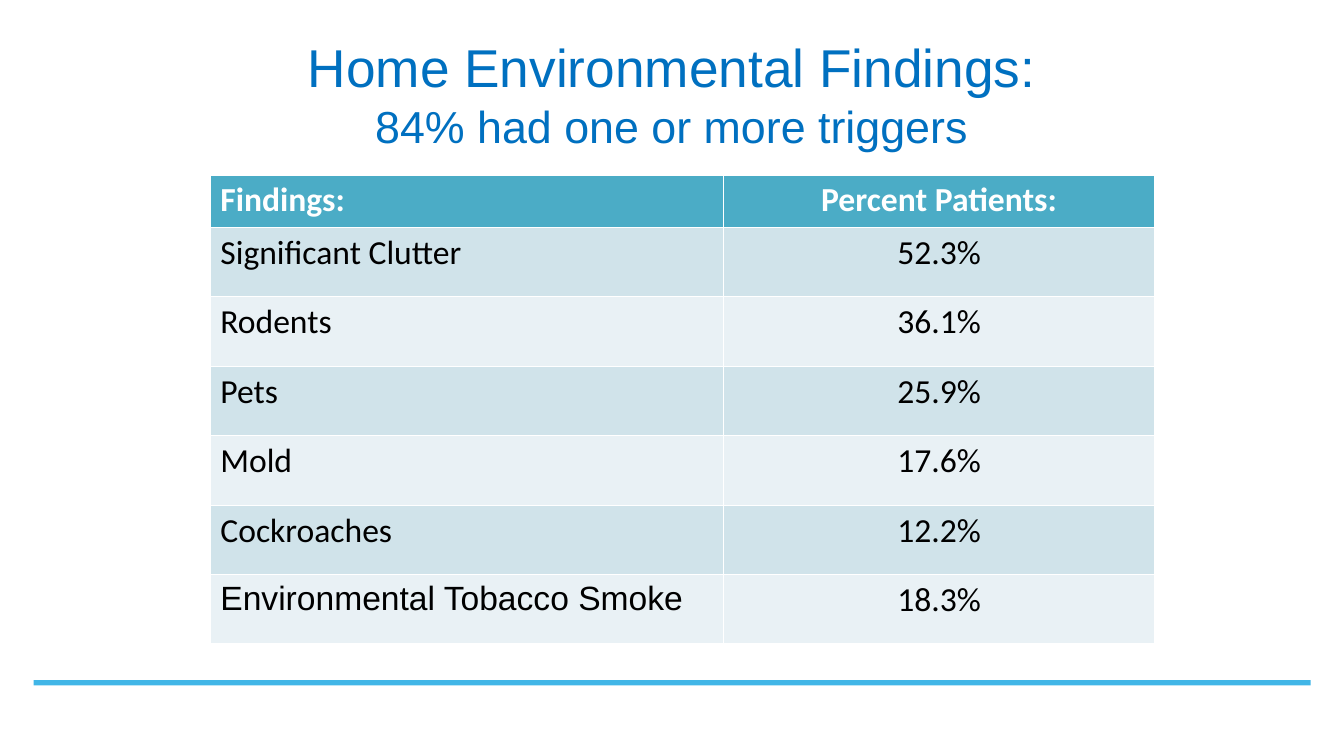
from dataclasses import dataclass

from pptx import Presentation
from pptx.dml.color import RGBColor
from pptx.enum.shapes import MSO_SHAPE as Preset
from pptx.enum.text import MSO_ANCHOR as Anchor, PP_ALIGN as Align
from pptx.slide import Slide
from pptx.table import _Cell as Cell
from pptx.text.text import _Paragraph as Paragraph
from pptx.util import Cm, Pt


@dataclass(frozen=True)
class Theme:
    title: str = "0070C0"
    rule: str = "41B6E7"
    header: str = "4BACC6"
    bands: tuple[str, str] = ("D0E3EA", "E9F1F5")
    light: str = "FFFFFF"
    dark: str = "000000"
    heading_font: str = "Arial"
    body_font: str = "Calibri"
    title_size: int = 38
    subtitle_size: int = 32
    table_size: int = 24


@dataclass(frozen=True)
class Finding:
    name: str
    percent: str
    name_font: str = "Calibri"


THEME = Theme()
HEADER = Finding("Findings:", "Percent Patients:")
FINDINGS = [
    Finding("Significant Clutter", "52.3%"),
    Finding("Rodents", "36.1%"),
    Finding("Pets", "25.9%"),
    Finding("Mold", "17.6%"),
    Finding("Cockroaches", "12.2%"),
    Finding("Environmental Tobacco Smoke", "18.3%", THEME.heading_font),
]
COLUMN_WIDTHS = (Cm(12.93), Cm(10.87))
HEADER_HEIGHT = Cm(1.32)
ROW_HEIGHT = Cm(1.75)


def add_text(paragraph: Paragraph, text: str, *, font: str, size: int,
             color: str, bold: bool = False) -> None:
    run = paragraph.add_run()
    run.text = text
    run.font.name = font
    run.font.size = Pt(size)
    run.font.bold = bold
    run.font.color.rgb = RGBColor.from_string(color)


def draw_rule(slide: Slide) -> None:
    rule = slide.shapes.add_shape(Preset.RECTANGLE, Cm(0.85), Cm(17.14), Cm(32.18), Cm(0.13))
    rule.shadow.inherit = False
    rule.fill.solid()
    rule.fill.fore_color.rgb = RGBColor.from_string(THEME.rule)
    rule.line.fill.background()


def draw_title(slide: Slide) -> None:
    title = slide.shapes.title
    title.left, title.top, title.width, title.height = Cm(1.69), Cm(0.76), Cm(30.48), Cm(3.18)
    title.text_frame.vertical_anchor = Anchor.MIDDLE
    title.text_frame.word_wrap = True
    paragraph = title.text_frame.paragraphs[0]
    paragraph.alignment = Align.CENTER
    add_text(paragraph, "Home Environmental Findings:", font=THEME.heading_font,
             size=THEME.title_size, color=THEME.title)
    paragraph.add_line_break()
    add_text(paragraph, "84% had one or more triggers", font=THEME.heading_font,
             size=THEME.subtitle_size, color=THEME.title)


def fill_cell(cell: Cell, text: str, *, fill: str, align: Align, font: str,
              color: str, bold: bool) -> None:
    cell.fill.solid()
    cell.fill.fore_color.rgb = RGBColor.from_string(fill)
    paragraph = cell.text_frame.paragraphs[0]
    paragraph.alignment = align
    add_text(paragraph, text, font=font, size=THEME.table_size, color=color, bold=bold)


def draw_table(slide: Slide) -> None:
    findings = [HEADER, *FINDINGS]
    height = HEADER_HEIGHT + ROW_HEIGHT * len(FINDINGS)
    table = slide.shapes.add_table(len(findings), len(COLUMN_WIDTHS), Cm(5.3), Cm(4.41),
                                   sum(COLUMN_WIDTHS), height).table
    for column, width in zip(table.columns, COLUMN_WIDTHS):
        column.width = width
    for index, finding in enumerate(findings):
        is_header = index == 0
        table.rows[index].height = HEADER_HEIGHT if is_header else ROW_HEIGHT
        fill = THEME.header if is_header else THEME.bands[(index - 1) % 2]
        color = THEME.light if is_header else THEME.dark
        fill_cell(table.cell(index, 0), finding.name, fill=fill, align=Align.LEFT,
                  font=finding.name_font, color=color, bold=is_header)
        fill_cell(table.cell(index, 1), finding.percent, fill=fill, align=Align.CENTER,
                  font=THEME.body_font, color=color, bold=is_header)


def main() -> None:
    presentation = Presentation()
    presentation.slide_width, presentation.slide_height = Cm(33.87), Cm(19.05)
    slide = presentation.slides.add_slide(presentation.slide_layouts[5])
    draw_rule(slide)
    draw_title(slide)
    draw_table(slide)
    presentation.save("out.pptx")


if __name__ == "__main__":
    main()
